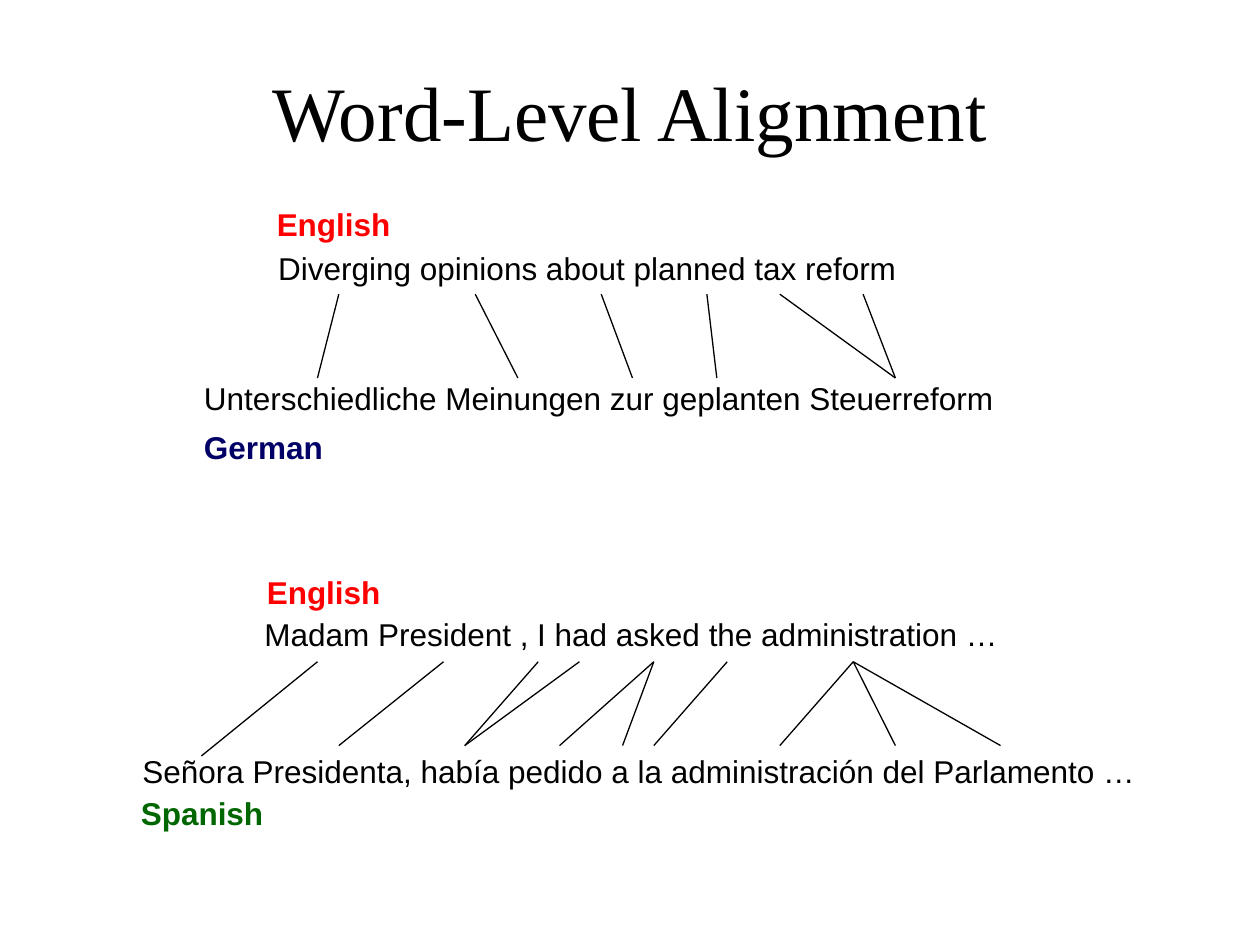
from dataclasses import dataclass
from pptx import Presentation as Deck
from pptx.dml.color import RGBColor as Color
from pptx.enum.shapes import MSO_CONNECTOR as Link
from pptx.enum.text import MSO_ANCHOR as Anchor, PP_ALIGN as Align
from pptx.oxml.ns import qn
from pptx.util import Cm, Pt


@dataclass(frozen=True)
class Theme:
    black: str = "000000"
    red: str = "FF0000"
    blue: str = "000066"
    green: str = "006600"
    head: str = "Times New Roman"
    body: str = "Arial"
    large: int = 44
    small: int = 18
    line: float = 0.75


def write(box, text, font, size, color, bold=False, align=Align.LEFT):
    part = box.text_frame.paragraphs[0]
    part.alignment = align
    run = part.add_run()
    run.text = text
    run.font.name = font
    run.font.size = Pt(size)
    run.font.bold = bold
    run.font.color.rgb = Color.from_string(color)


class Page:
    def __init__(self, slide, theme):
        self.slide = slide
        self.theme = theme

    def box(self, left, top, width, height, wrap=False):
        box = self.slide.shapes.add_textbox(Cm(left), Cm(top), Cm(width), Cm(height))
        box.text_frame.word_wrap = wrap
        return box

    def title(self, text):
        box = self.box(1.9, 0.64, 21.6, 3.18, wrap=True)
        box.text_frame.vertical_anchor = Anchor.MIDDLE
        look = self.theme
        write(box, text, look.head, look.large, look.black, align=Align.CENTER)

    def phrase(self, text, left, top, width):
        look = self.theme
        write(self.box(left, top, width, 0.94), text, look.body, look.small, look.black)

    def label(self, text, left, top, width, color):
        look = self.theme
        box = self.box(left, top, width, 1.02)
        write(box, text, look.body, look.small, color, bold=True)

    def link(self, start, top, end, low):
        line = self.slide.shapes.add_connector(
            Link.STRAIGHT, Cm(start), Cm(top), Cm(end), Cm(low))
        line.line.color.rgb = Color.from_string(self.theme.black)
        line.line.width = Pt(self.theme.line)
        props = line._element.spPr
        props.append(props.makeelement(qn("a:effectLst"), {}))

    def align(self, top, low, pairs):
        for start, end in pairs:
            self.link(start, top, end, low)


def main():
    deck = Deck()
    deck.slide_width, deck.slide_height = Cm(25.4), Cm(19.05)
    look = Theme()
    page = Page(deck.slides.add_slide(deck.slide_layouts[6]), look)
    page.title("Word-Level Alignment")

    page.label("English", 5.33, 4.01, 2.8, look.red)
    page.phrase("Diverging opinions about planned tax reform", 5.36, 4.9, 14.18)
    page.align(5.93, 7.62, [
        (6.83, 6.4), (9.58, 10.44), (12.12, 12.75),
        (14.25, 14.45), (15.72, 18.05), (17.4, 18.05)])
    page.phrase("Unterschiedliche Meinungen zur geplanten Steuerreform", 3.86, 7.52, 17.78)
    page.label("German", 3.86, 8.51, 2.92, look.blue)

    page.label("English", 5.13, 11.43, 2.8, look.red)
    page.phrase("Madam President , I had asked the administration …", 5.08, 12.27, 15.3)
    page.link(6.4, 13.34, 4.06, 15.24)
    page.align(13.34, 15.03, [
        (8.94, 6.83), (10.85, 9.37), (11.68, 9.37),
        (13.18, 11.28), (13.18, 12.55), (14.66, 13.18),
        (17.2, 15.72), (17.2, 18.05), (17.2, 20.17)])
    page.phrase("Señora Presidenta, había pedido a la administración del Parlamento …",
                2.62, 15.04, 20.52)
    page.label("Spanish", 2.59, 15.88, 2.97, look.green)
    deck.save("out.pptx")


if __name__ == "__main__":
    main()
